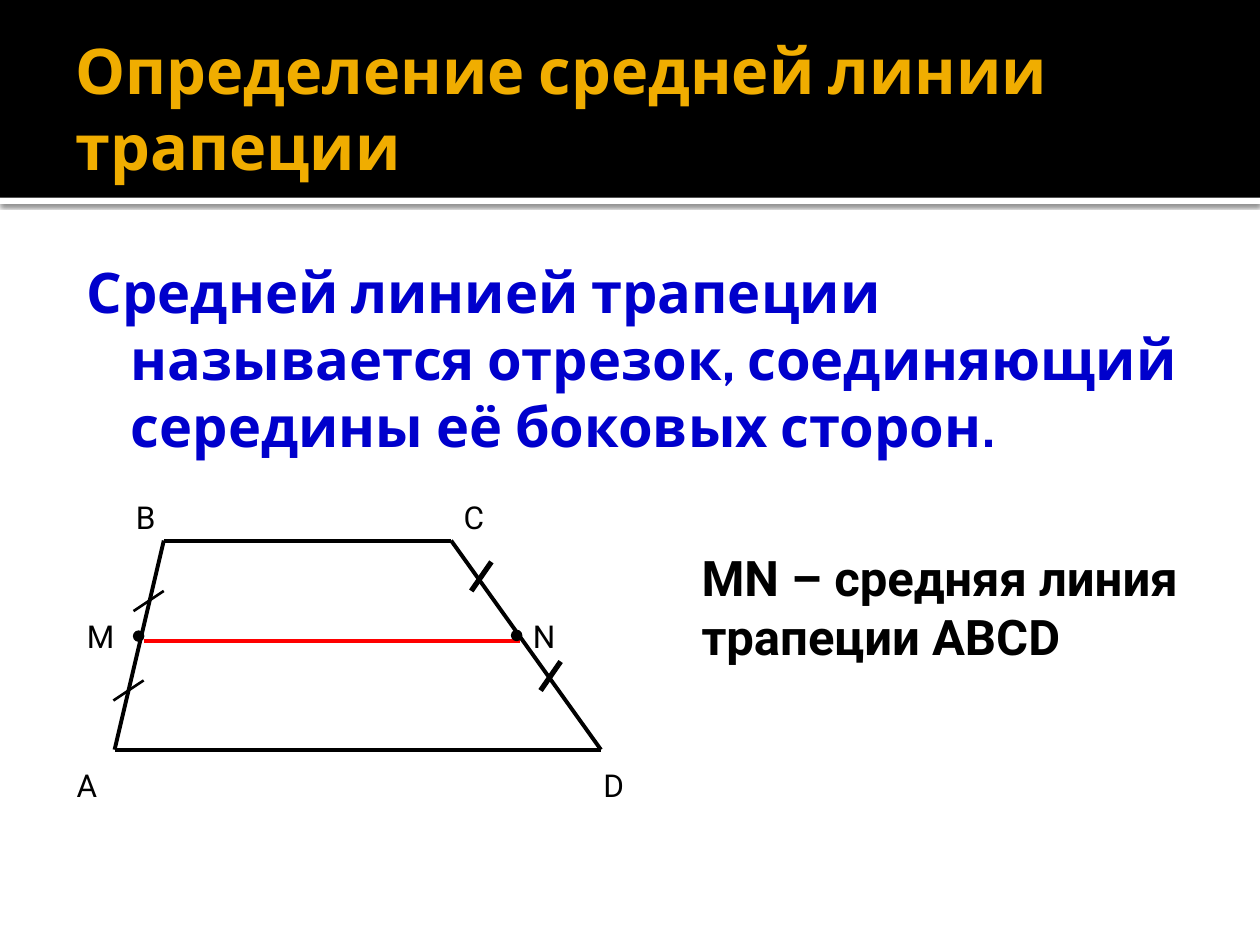
from dataclasses import dataclass
from typing import Any

from lxml import etree
from pptx import Presentation
from pptx.dml.color import RGBColor
from pptx.enum.shapes import MSO_CONNECTOR, MSO_SHAPE
from pptx.enum.text import MSO_ANCHOR
from pptx.oxml.ns import qn
from pptx.util import Pt

RECTANGLE = MSO_SHAPE.RECTANGLE
DOT = MSO_SHAPE.FLOWCHART_CONNECTOR
STRAIGHT = MSO_CONNECTOR.STRAIGHT
TOP, MIDDLE = MSO_ANCHOR.TOP, MSO_ANCHOR.MIDDLE
COLORS = {"black": "000000", "white": "FFFFFF", "gold": "F0AD00", "blue": "0000CC", "red": "FF0000"}
HEADING_FONT, BODY_FONT = "Cabin", "Roboto"


@dataclass
class SlideBuilder:
    """Draws styled elements on the current slide, with lengths in points."""
    slide: Any

    def color(self, name):
        return RGBColor.from_string(COLORS[name])

    def shape(self, kind, left, top, width, height, fill, line_width=0):
        shape = self.slide.shapes.add_shape(kind, Pt(left), Pt(top), Pt(width), Pt(height))
        shape.shadow.inherit = False
        shape.fill.solid()
        shape.fill.fore_color.rgb = self.color(fill)
        if line_width:
            shape.line.color.rgb = self.color(fill)
            shape.line.width = Pt(line_width)
        else:
            shape.line.fill.background()
        return shape

    def bottom_shadow(self, shape, blur, distance, opacity):
        effects = shape._element.spPr.find(qn("a:effectLst"))
        shadow = etree.SubElement(effects, qn("a:outerShdw"), blurRad=str(Pt(blur)),
                                  dist=str(Pt(distance)), dir="5400000", algn="tl", rotWithShape="0")
        color = etree.SubElement(shadow, qn("a:srgbClr"), val=COLORS["black"])
        etree.SubElement(color, qn("a:alpha"), val=str(opacity * 1000))

    def line(self, start, end, width=2.25, color="black"):
        connector = self.slide.shapes.add_connector(STRAIGHT, *(Pt(value) for value in (*start, *end)))
        connector.line.color.rgb = self.color(color)
        connector.line.width = Pt(width)
        etree.SubElement(connector._element.spPr, qn("a:effectLst"))

    def text(self, text, left, top, width, height, size=18, font=BODY_FONT, color="black",
             bold=False, anchor=TOP, insets=(7.2, 3.6, 7.2, 3.6), indent=None):
        box = self.slide.shapes.add_textbox(Pt(left), Pt(top), Pt(width), Pt(height))
        frame = box.text_frame
        frame.word_wrap = True
        frame.vertical_anchor = anchor
        frame.margin_left, frame.margin_top, frame.margin_right, frame.margin_bottom = map(Pt, insets)
        frame.text = text
        paragraph = frame.paragraphs[0]
        if indent:
            properties = paragraph._p.get_or_add_pPr()
            for name, value in zip(("marL", "indent"), indent):
                properties.set(name, str(Pt(value)))
        run_font = paragraph.runs[0].font
        run_font.name = font
        run_font.size = Pt(size)
        run_font.bold = bold
        run_font.color.rgb = self.color(color)


def main():
    presentation = Presentation()
    presentation.slide_width, presentation.slide_height = Pt(720), Pt(540)
    builder = SlideBuilder(presentation.slides.add_slide(presentation.slide_layouts[6]))

    strip = builder.shape(RECTANGLE, 0, 113, 720, 3.6, "white")
    builder.bottom_shadow(strip, 2.5, 0.8, 60)
    builder.shape(RECTANGLE, 0, 0, 720, 113, "black")
    builder.text("Определение средней линии трапеции", 36, 12.2, 648, 98.6, 36, HEADING_FONT,
                 "gold", True, MIDDLE, (7.2, 3.6, 3.6, 3.6))
    builder.text("Средней линией трапеции называется отрезок, соединяющий середины её боковых сторон.",
                 36, 139.7, 648, 364.3, 32, HEADING_FONT, "blue", True,
                 insets=(4.3, 7.2, 7.2, 3.6), indent=(34.5, -25.2))

    corners = {"A": (65.5, 428.4), "B": (93.6, 308.9), "C": (257.8, 308.9), "D": (343.4, 428.4)}
    for start, end in ("AD", "CD", "BC", "BA"):
        builder.line(corners[start], corners[end])
    builder.line((82.1, 366.5), (297.4, 366.5), color="red")

    for left, top in ((76.3, 360.6), (292.3, 360.2)):
        builder.shape(DOT, left, top, 5.8, 5.8, "black", 0.75)

    left_ticks = ((93.6, 337.7), (82.1, 388.8))
    right_ticks = ((280.8, 321.1), (320.4, 378))
    for ticks, run, drop, width in ((left_ticks, 17.3, 11.5, 1.5), (right_ticks, 11.5, 16.6, 3)):
        for x, y in ticks:
            builder.line((x, y), (x - run, y + drop), width)

    labels = (("A", 36.7, 434.2, 39.6), ("D", 337.7, 434.2, 39.6), ("B", 70.6, 280.8, 39.6),
              ("C", 257.8, 280.8, 39.6), ("M", 42.5, 349.2, 22.3), ("N", 297.4, 349.2, 22.3))
    for letter, left, top, width in labels:
        builder.text(letter, left, top, width, 28.8)
    builder.text("MN – средняя линия трапеции ABCD", 393.8, 309.6, 317.5, 74.2, 28, bold=True)

    presentation.save("out.pptx")


if __name__ == "__main__":
    main()
